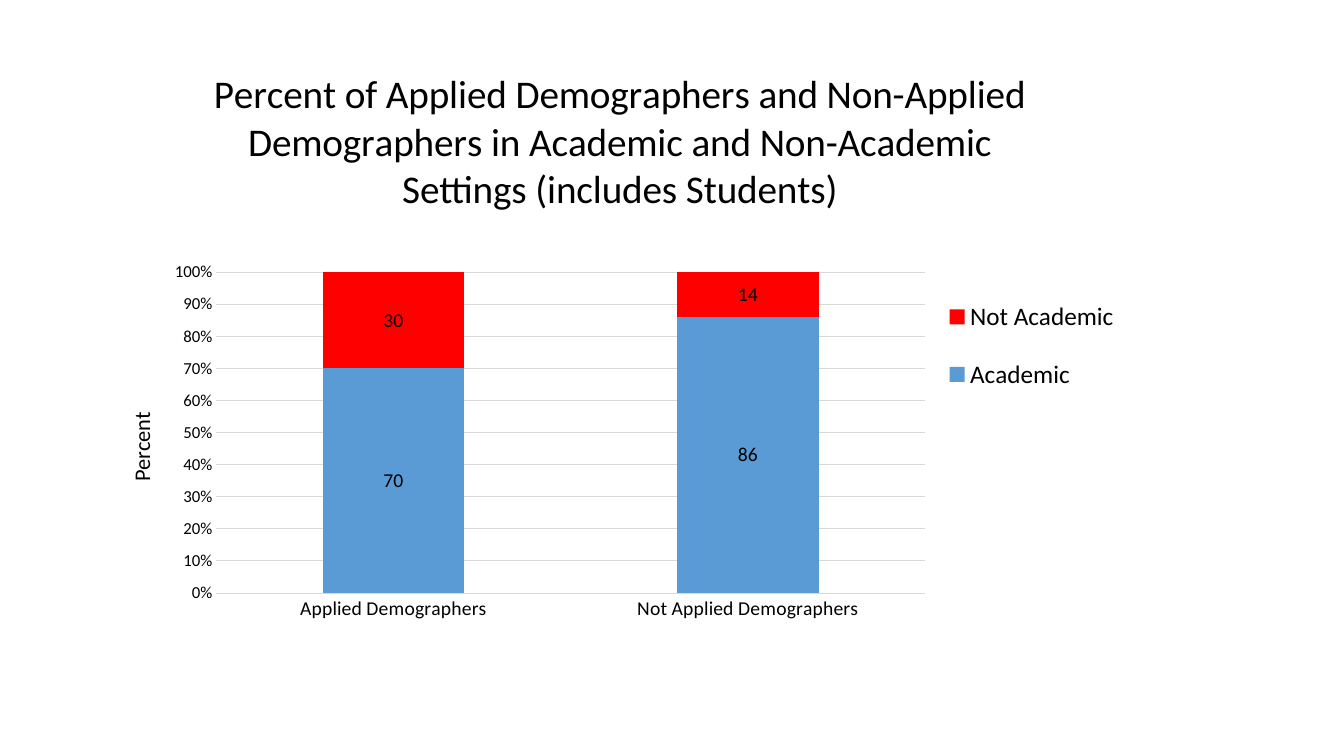
from lxml import etree
from pptx import Presentation, util as u
from pptx.chart.data import CategoryChartData
from pptx.dml.color import RGBColor
from pptx.enum import chart as ch
from pptx.oxml.ns import qn

PX = 914400 / 100.8
COLORS = {"text": "000000", "grid": "D9D9D9", "Academic": "5B9BD5", "Not Academic": "FF0000"}
FONT = "Calibri"
TITLE = ("Percent of Applied Demographers and Non-Applied Demographers "
         "in Academic and Non-Academic Settings (includes Students)")
AXIS_TITLE = "Percent"
CATEGORIES = ["Applied Demographers", "Not Applied Demographers"]
SERIES = {"Academic": (70, 86), "Not Academic": (30, 14)}

# left, top, width, height in px on the slide
SLIDE = (1344, 756)
CHART = (91, 36, 1044, 654)
PLOT = (216, 272, 709, 321)
LEGEND = (942, 275, 180, 142)
TITLE_AT = (207, 60)
AXIS_TITLE_AT = (122, 408)


def px(n):
    return u.Emu(round(n * PX))


def rgb(name):
    return RGBColor.from_string(COLORS[name])


def style(font, size):
    font.name, font.size, font.bold = FONT, u.Pt(size), False
    font.color.rgb = rgb("text")


def grid_line(line):
    line.color.rgb = rgb("grid")
    line.width = u.Pt(0.75)


def place(element, box, index=1, inner=False):
    """Give a chart part a manual layout, as fractions of the chart frame."""
    for old in element.findall(qn("c:layout")):
        element.remove(old)
    layout = etree.Element(qn("c:layout"))
    manual = etree.SubElement(layout, qn("c:manualLayout"))
    left, top, width, height = CHART
    fractions = [(box[0] - left) / width, (box[1] - top) / height]
    fractions += [n / full for n, full in zip(box[2:], (width, height))]
    values = [("layoutTarget", "inner")] if inner else []
    values += [("xMode", "edge"), ("yMode", "edge")]
    values += [(key, f"{n:.3f}") for key, n in zip("xywh", fractions)]
    for key, value in values:
        etree.SubElement(manual, qn(f"c:{key}")).set("val", value)
    element.insert(index, layout)


def write_title(title, words, size, at):
    p = title.text_frame.paragraphs[0]
    r = p.add_run()
    r.text = words
    style(r.font, size)
    place(title._element, at)


def main():
    prs = Presentation()
    prs.slide_width, prs.slide_height = map(px, SLIDE)
    s = prs.slides.add_slide(prs.slide_layouts[6])

    data = CategoryChartData()
    data.categories = CATEGORIES
    for name, values in SERIES.items():
        data.add_series(name, values)
    chart = s.shapes.add_chart(
        ch.XL_CHART_TYPE.COLUMN_STACKED_100, *map(px, CHART), data).chart
    style(chart.font, 10)

    chart.has_title = True
    write_title(chart.chart_title, TITLE, 28, TITLE_AT)

    plot = chart.plots[0]
    plot.gap_width, plot.overlap = 150, 100
    plot.vary_by_categories = False
    for series in plot.series:
        series.format.fill.solid()
        series.format.fill.fore_color.rgb = rgb(series.name)
        labels = series.data_labels
        labels.show_value = True
        style(labels.font, 14)
    place(chart._chartSpace.chart.plotArea, PLOT, index=0, inner=True)

    cat, val = chart.category_axis, chart.value_axis
    for axis, size in ((cat, 14), (val, 12)):
        style(axis.tick_labels.font, size)
        axis.major_tick_mark = axis.minor_tick_mark = ch.XL_TICK_MARK.NONE
    grid_line(cat.format.line)
    val.format.line.fill.background()
    val.has_major_gridlines = True
    grid_line(val.major_gridlines.format.line)
    val.minimum_scale, val.maximum_scale, val.major_unit = 0, 1, 0.1
    val.tick_labels.number_format = "0%"
    val.tick_labels.number_format_is_linked = False
    val.has_title = True
    write_title(val.axis_title, AXIS_TITLE, 16, AXIS_TITLE_AT)
    val.axis_title.text_frame._txBody.bodyPr.set("rot", "-5400000")

    chart.has_legend = True
    legend = chart.legend
    legend.position = ch.XL_LEGEND_POSITION.RIGHT
    legend.include_in_layout = False
    style(legend.font, 18)
    place(legend._element, LEGEND)

    prs.save("out.pptx")


if __name__ == "__main__":
    main()
